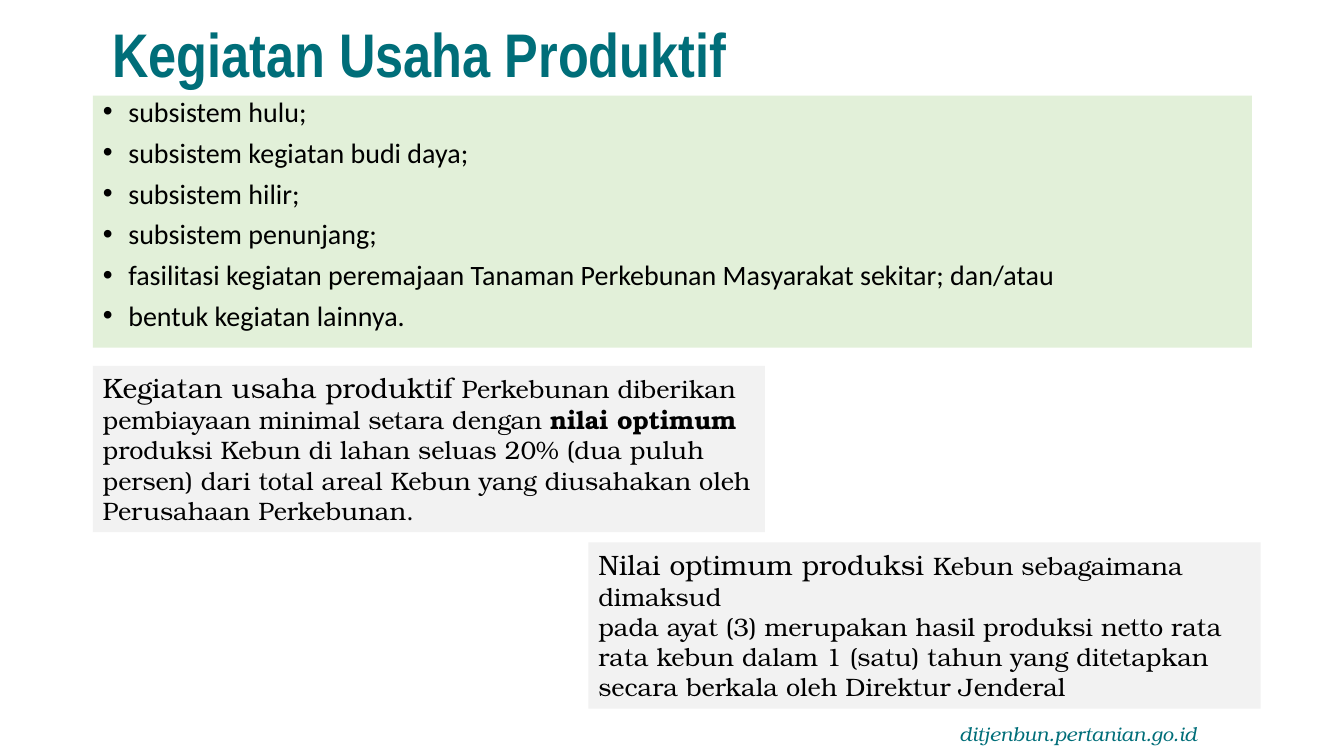
import dataclasses

import lxml.etree
import pptx
import pptx.dml.color
import pptx.enum.shapes
import pptx.enum.text
import pptx.oxml.ns
import pptx.util

Cm = pptx.util.Cm
RGBColor = pptx.dml.color.RGBColor

TEAL = RGBColor(0x00, 0x6E, 0x79)
BLACK = RGBColor(0x00, 0x00, 0x00)
PALE_GREEN = RGBColor(0xE2, 0xF0, 0xD9)
PALE_GREY = RGBColor(0xF2, 0xF2, 0xF2)
SERIF = "TeX Gyre Bonum"
LEFT = 2.34


@dataclasses.dataclass
class Run:
    text: str
    size: int = 18
    bold: bool = False


@dataclasses.dataclass
class Note:
    left: float
    top: float
    paragraphs: list[list[Run]]


SUBSYSTEMS = [
    "subsistem hulu;",
    "subsistem kegiatan budi daya;",
    "subsistem hilir;",
    "subsistem penunjang;",
    "fasilitasi kegiatan peremajaan Tanaman Perkebunan Masyarakat sekitar; dan/atau",
    "bentuk kegiatan lainnya.",
]

NOTES = [
    Note(LEFT, 9.22, [[
        Run("Kegiatan usaha produktif ", size=20),
        Run("Perkebunan diberikan pembiayaan minimal setara dengan "),
        Run("nilai optimum ", bold=True),
        Run("produksi Kebun di lahan seluas 20% (dua puluh persen) dari total "
            "areal Kebun yang diusahakan oleh Perusahaan Perkebunan."),
    ]]),
    Note(14.83, 13.67, [
        [Run("Nilai optimum produksi ", size=20), Run("Kebun sebagaimana dimaksud")],
        [Run("pada ayat (3) merupakan hasil produksi netto rata rata kebun dalam "
             "1 (satu) tahun yang ditetapkan secara berkala oleh Direktur Jenderal")],
    ]),
]


def add_text(p, text: str, *, size: int, font: str = SERIF, color: RGBColor = BLACK,
             bold: bool = False, italic: bool = False) -> None:
    r = p.add_run()
    r.text = text
    r.font.size = pptx.util.Pt(size)
    r.font.name = font
    r.font.color.rgb = color
    r.font.bold = bold
    r.font.italic = italic


def place(sp, left: float, top: float, width: float, height: float) -> None:
    sp.left, sp.top, sp.width, sp.height = map(Cm, (left, top, width, height))


def fill(sp, color: RGBColor) -> None:
    sp.fill.solid()
    sp.fill.fore_color.rgb = color


def get_paragraph(tf, index: int):
    return tf.paragraphs[0] if index == 0 else tf.add_paragraph()


def set_bullet(p) -> None:
    pPr = p._p.get_or_add_pPr()
    indent = Cm(0.64)
    pPr.set("marL", str(indent))
    pPr.set("indent", str(-indent))
    for tag, name, value in (("a:buFont", "typeface", "Arial"), ("a:buChar", "char", "•")):
        lxml.etree.SubElement(pPr, pptx.oxml.ns.qn(tag)).set(name, value)


def add_title(s) -> None:
    sp = s.shapes.title
    place(sp, 2.57, 0.46, 29.21, 1.96)
    tf = sp.text_frame
    tf.auto_size = pptx.enum.text.MSO_AUTO_SIZE.NONE
    tf.vertical_anchor = pptx.enum.text.MSO_ANCHOR.MIDDLE
    p = tf.paragraphs[0]
    p.alignment = pptx.enum.text.PP_ALIGN.LEFT
    p.line_spacing = 0.9
    add_text(p, "Kegiatan Usaha Produktif", size=44, font="Arial Narrow",
             color=TEAL, bold=True)


def add_subsystems(s) -> None:
    sp = s.placeholders[1]
    place(sp, LEFT, 2.41, 29.21, 6.35)
    fill(sp, PALE_GREEN)
    tf = sp.text_frame
    tf.auto_size = pptx.enum.text.MSO_AUTO_SIZE.NONE
    for i, text in enumerate(SUBSYSTEMS):
        p = get_paragraph(tf, i)
        set_bullet(p)
        p.line_spacing = 0.8
        p.space_before = pptx.util.Pt(10 if i else 0)
        add_text(p, text, size=20, font="Calibri")


def add_note(s, note: Note) -> None:
    sp = s.shapes.add_shape(pptx.enum.shapes.MSO_SHAPE.RECTANGLE,
                            Cm(note.left), Cm(note.top), Cm(16.94), Cm(4.19))
    sp.shadow.inherit = False
    fill(sp, PALE_GREY)
    sp.line.fill.background()
    tf = sp.text_frame
    tf.word_wrap = True
    tf.vertical_anchor = pptx.enum.text.MSO_ANCHOR.TOP
    for i, runs in enumerate(note.paragraphs):
        p = get_paragraph(tf, i)
        p.alignment = pptx.enum.text.PP_ALIGN.LEFT
        for run in runs:
            add_text(p, run.text, size=run.size, bold=run.bold)


def add_website(s) -> None:
    sp = s.shapes.add_textbox(Cm(23.93), Cm(18.06), Cm(6.53), Cm(0.86))
    sp.text_frame.word_wrap = False
    add_text(sp.text_frame.paragraphs[0], "ditjenbun.pertanian.go.id",
             size=14, color=TEAL, italic=True)


def main() -> None:
    prs = pptx.Presentation()
    prs.slide_width, prs.slide_height = Cm(33.87), Cm(19.05)
    s = prs.slides.add_slide(prs.slide_layouts[1])

    # Title and list
    add_title(s)
    add_subsystems(s)

    # Explanatory notes
    for note in NOTES:
        add_note(s, note)

    # Footer
    add_website(s)
    prs.save("out.pptx")


if __name__ == "__main__":
    main()
